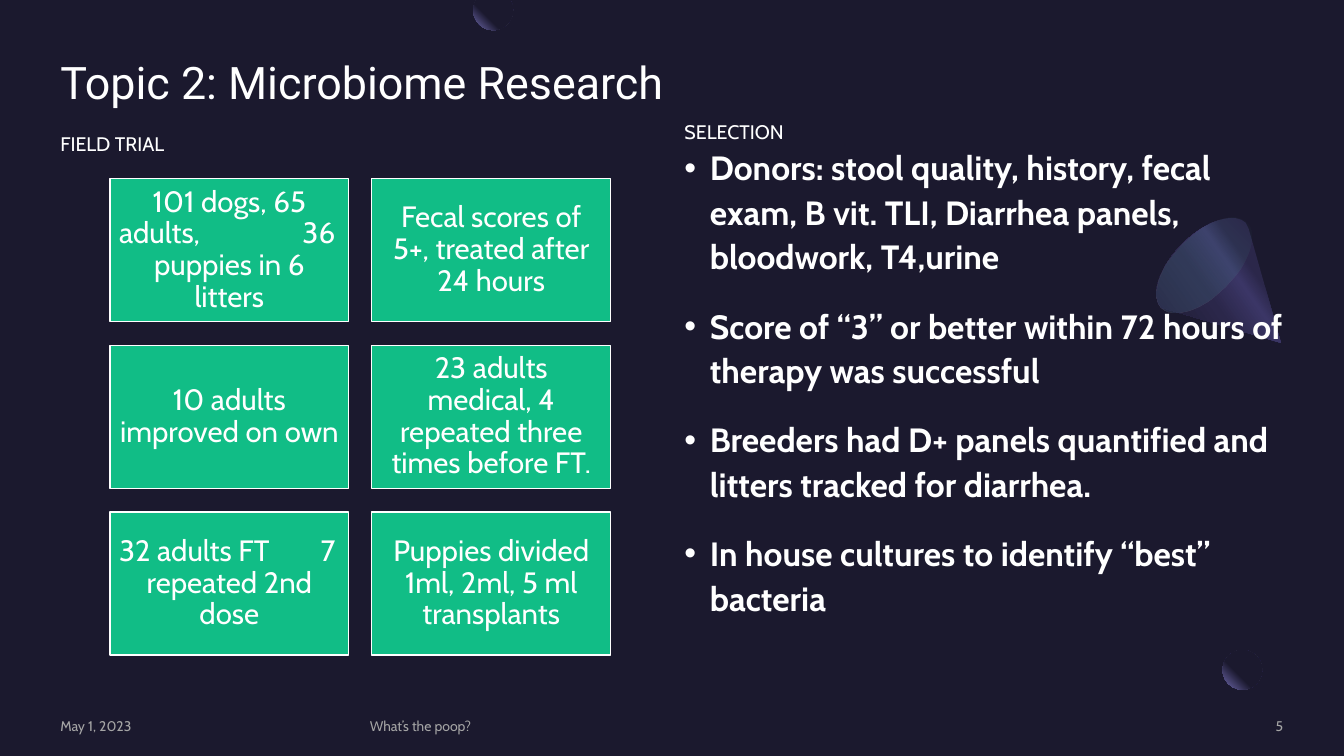
"""Build the microbiome research slide with its field trial grid and selection list."""
import math

import lxml.etree
import pptx
import pptx.dml.color
import pptx.enum.shapes
import pptx.enum.text
import pptx.oxml.ns
import pptx.util

Cm = pptx.util.Cm
Pt = pptx.util.Pt
qn = pptx.oxml.ns.qn
ALIGN = pptx.enum.text.PP_ALIGN
ANCHOR = pptx.enum.text.MSO_ANCHOR
SHAPE = pptx.enum.shapes.MSO_SHAPE

COLOURS = {
    "background": "1B192E",
    "text": "FFFFFF",
    "footer": "A5A5A5",
    "card": "11BD86",
    "glow": "746EB3",
    "cone": "2B274A",
    "cone_light": "3B3666",
    "rim": "453E75",
    "mint": "59EFC0",
}
FRAME = {
    "margin_left": 0, "margin_top": 0, "margin_right": 0, "margin_bottom": 0,
    "word_wrap": True, "auto_size": pptx.enum.text.MSO_AUTO_SIZE.NONE,
}
CARD_FRAME = {**FRAME, "vertical_anchor": ANCHOR.MIDDLE,
              "margin_left": Cm(0.23), "margin_right": Cm(0.23)}
PARAGRAPH = {"alignment": ALIGN.LEFT, "line_spacing": 1.1, "space_before": Pt(0)}
FONT = {"name": "Cabin", "size": Pt(14), "bold": False}

CARDS = [
    ["101 dogs, 65", "adults,\t36", "puppies in 6 litters"],
    ["Fecal scores of 5+, treated after 24 hours"],
    ["10 adults improved on own"],
    ["23 adults medical, 4 repeated three times before FT."],
    ["32 adults FT\t7", "repeated 2nd dose"],
    ["Puppies divided", "1ml, 2ml, 5 ml transplants"],
]
SELECTION = [
    "Donors: stool quality, history, fecal exam, B vit. TLI, Diarrhea panels, bloodwork, T4,urine",
    "Score of “3” or better within 72 hours of therapy was successful",
    "Breeders had D+ panels quantified and litters tracked for diarrhea.",
    "In house cultures to identify “best” bacteria",
]
FOOTERS = [
    ("May 1, 2023", 1.52, 7.32, ALIGN.LEFT),
    ("What’s the poop?", 9.32, 17.73, ALIGN.LEFT),
    ("5", 27.64, 4.7, ALIGN.RIGHT),
]
GLOW_STOPS = [(0, "background", 100), (60, "background", 100), (100, "glow", 100)]
CONE_STOPS = [(0, "cone", 100), (30, "cone", 100), (40, "cone_light", 100),
              (60, "cone", 100), (100, "background", 100)]
RIM_STOPS = [(0, "rim", 33), (100, "mint", 0)]


def apply_format(target, values):
    """Set each named attribute on the target."""
    for name, value in values.items():
        setattr(target, name, value)


def rgb(name):
    """Return a palette colour."""
    return pptx.dml.color.RGBColor.from_string(COLOURS[name])


def place(shape, left, top, width, height):
    """Move and size a shape in centimetres."""
    apply_format(shape, {"left": Cm(left), "top": Cm(top),
                         "width": Cm(width), "height": Cm(height)})


def write(shape, lines, frame=FRAME, paragraph_format=PARAGRAPH, font=FONT, colour="text"):
    """Write formatted lines into a shape and return its paragraphs."""
    text_frame = shape.text_frame
    apply_format(text_frame, frame)
    for index, line in enumerate(lines):
        paragraph = text_frame.add_paragraph() if index else text_frame.paragraphs[0]
        apply_format(paragraph, paragraph_format)
        run = paragraph.add_run()
        run.text = line
        apply_format(run.font, font)
        run.font.color.rgb = rgb(colour)
    return text_frame.paragraphs


def fill_gradient(shape, stops, angle=None):
    """Give a shape a linear gradient, or a corner glow when no angle is set."""
    shape.shadow.inherit = False
    shape.line.fill.background()
    shape.fill.solid()
    solid = shape.element.spPr.find(qn("a:solidFill"))
    gradient = lxml.etree.Element(qn("a:gradFill"), rotWithShape="1")
    stop_list = lxml.etree.SubElement(gradient, qn("a:gsLst"))
    for position, name, opacity in stops:
        stop = lxml.etree.SubElement(stop_list, qn("a:gs"), pos=str(position * 1000))
        colour = lxml.etree.SubElement(stop, qn("a:srgbClr"), val=COLOURS[name])
        if opacity < 100:
            lxml.etree.SubElement(colour, qn("a:alpha"), val=str(opacity * 1000))
    if angle is None:
        path = lxml.etree.SubElement(gradient, qn("a:path"), path="circle")
        lxml.etree.SubElement(path, qn("a:fillToRect"), l="100000", b="100000")
    else:
        lxml.etree.SubElement(gradient, qn("a:lin"), ang=str(angle * 60000), scaled="0")
    solid.getparent().replace(solid, gradient)


def curve(start, first, second, end, steps=10):
    """Return points along a cubic curve, leaving out its start."""
    points = []
    for step in range(1, steps + 1):
        t = step / steps
        weights = ((1 - t) ** 3, 3 * t * (1 - t) ** 2, 3 * t * t * (1 - t), t ** 3)
        corners = zip(start, first, second, end)
        points.append(tuple(sum(w * c for w, c in zip(weights, axis)) for axis in corners))
    return points


def add_outline(slide, points):
    """Add a closed outline through points in centimetres."""
    corners = [(Cm(x), Cm(y)) for x, y in points]
    builder = slide.shapes.build_freeform(*corners[0])
    builder.add_line_segments(corners[1:], close=True)
    return builder.convert_to_shape()


def add_ellipse(slide, left, top, width, height):
    """Add an ellipse."""
    return slide.shapes.add_shape(SHAPE.OVAL, Cm(left), Cm(top), Cm(width), Cm(height))


def add_decorations(slide):
    """Draw the glowing discs and the cone behind the text."""
    disc = add_ellipse(slide, 30.81, 16.38, 1, 1)
    fill_gradient(disc, GLOW_STOPS)
    angles = [math.radians(-31 + 242 * step / 40) for step in range(41)]
    top_disc = add_outline(slide, [(12.43 + 0.5 * math.cos(a), max(0, 0.26 + 0.5 * math.sin(a)))
                                   for a in angles])
    fill_gradient(top_disc, GLOW_STOPS)
    tip, low, side, high = (32.28, 8.64), (29.26, 7.75), (29.79, 6.15), (31.39, 5.61)
    cone = add_outline(slide, [tip, low]
                       + curve(low, (28.98, 7.44), (29.21, 6.73), side)
                       + curve(side, (30.38, 5.56), (31.09, 5.33), high)
                       + [(31.47, 5.77)])
    fill_gradient(cone, CONE_STOPS, 145)
    rim = add_ellipse(slide, 29.59, 5.18, 1.5, 3)
    rim.rotation = 225
    fill_gradient(rim, RIM_STOPS, 90)
    for shape in (disc, top_disc, cone, rim):
        slide.shapes.title.element.addprevious(shape.element)


def add_card(slide, left, top, lines):
    """Add a field trial card; a tab in a line pushes the rest to the right."""
    card = slide.shapes.add_shape(SHAPE.RECTANGLE, Cm(left), Cm(top), Cm(6.02), Cm(3.61))
    card.shadow.inherit = False
    card.fill.solid()
    card.fill.fore_color.rgb = rgb("card")
    card.line.color.rgb = rgb("text")
    card.line.width = Pt(1)
    centred = {**PARAGRAPH, "alignment": ALIGN.CENTER, "line_spacing": 0.9}
    for paragraph in write(card, lines, CARD_FRAME, centred, {**FONT, "size": Pt(21)}):
        if "\t" in paragraph.text:
            paragraph.alignment = ALIGN.LEFT
            properties = paragraph._p.get_or_add_pPr()
            tabs = lxml.etree.SubElement(properties, qn("a:tabLst"))
            lxml.etree.SubElement(tabs, qn("a:tab"), pos=str(Cm(5.45)), algn="r")


def add_list(shape):
    """Write the bulleted selection list."""
    top_anchored = {**FRAME, "vertical_anchor": ANCHOR.TOP}
    bold = {**FONT, "size": Pt(24), "bold": True}
    for index, paragraph in enumerate(write(shape, SELECTION, top_anchored, font=bold)):
        paragraph.space_before = Pt(18 if index else 0)
        properties = paragraph._p.get_or_add_pPr()
        properties.set("marL", str(Cm(0.64)))
        properties.set("indent", str(Cm(-0.64)))
        lxml.etree.SubElement(properties, qn("a:buChar"), char="•")


def main():
    """Build and save the slide."""
    presentation = pptx.Presentation()
    presentation.slide_width, presentation.slide_height = Cm(33.87), Cm(19.05)
    slide = presentation.slides.add_slide(presentation.slide_layouts[4])
    slide.background.fill.solid()
    slide.background.fill.fore_color.rgb = rgb("background")
    holders = {holder.placeholder_format.idx: holder for holder in slide.placeholders}
    unused = holders[2].element
    unused.getparent().remove(unused)

    place(holders[0], 1.52, 1.52, 30.84, 3.71)
    write(holders[0], ["Topic 2: Microbiome Research"], {**FRAME, "vertical_anchor": ANCHOR.TOP},
          {**PARAGRAPH, "line_spacing": 0.9}, {**FONT, "name": "Roboto", "size": Pt(32)})
    for index, left, top, heading in ((1, 1.52, 2.59, "FIELD TRIAL"), (3, 17.25, 2.3, "SELECTION")):
        place(holders[index], left, top, 15.11, 1.32)
        write(holders[index], [heading], {**FRAME, "vertical_anchor": ANCHOR.BOTTOM})
    place(holders[4], 17.25, 3.61, 15.11, 14.45)
    add_list(holders[4])

    add_decorations(slide)
    for index, lines in enumerate(CARDS):
        row, column = divmod(index, 2)
        add_card(slide, 2.77 + 6.6 * column, 4.5 + 4.2 * row, lines)
    for text, left, width, alignment in FOOTERS:
        box = slide.shapes.add_textbox(Cm(left), Cm(18.08), Cm(width), Cm(0.43))
        write(box, [text], {**FRAME, "vertical_anchor": ANCHOR.MIDDLE},
              {"alignment": alignment}, {**FONT, "size": Pt(10)}, "footer")
    presentation.save("out.pptx")


if __name__ == "__main__":
    main()
